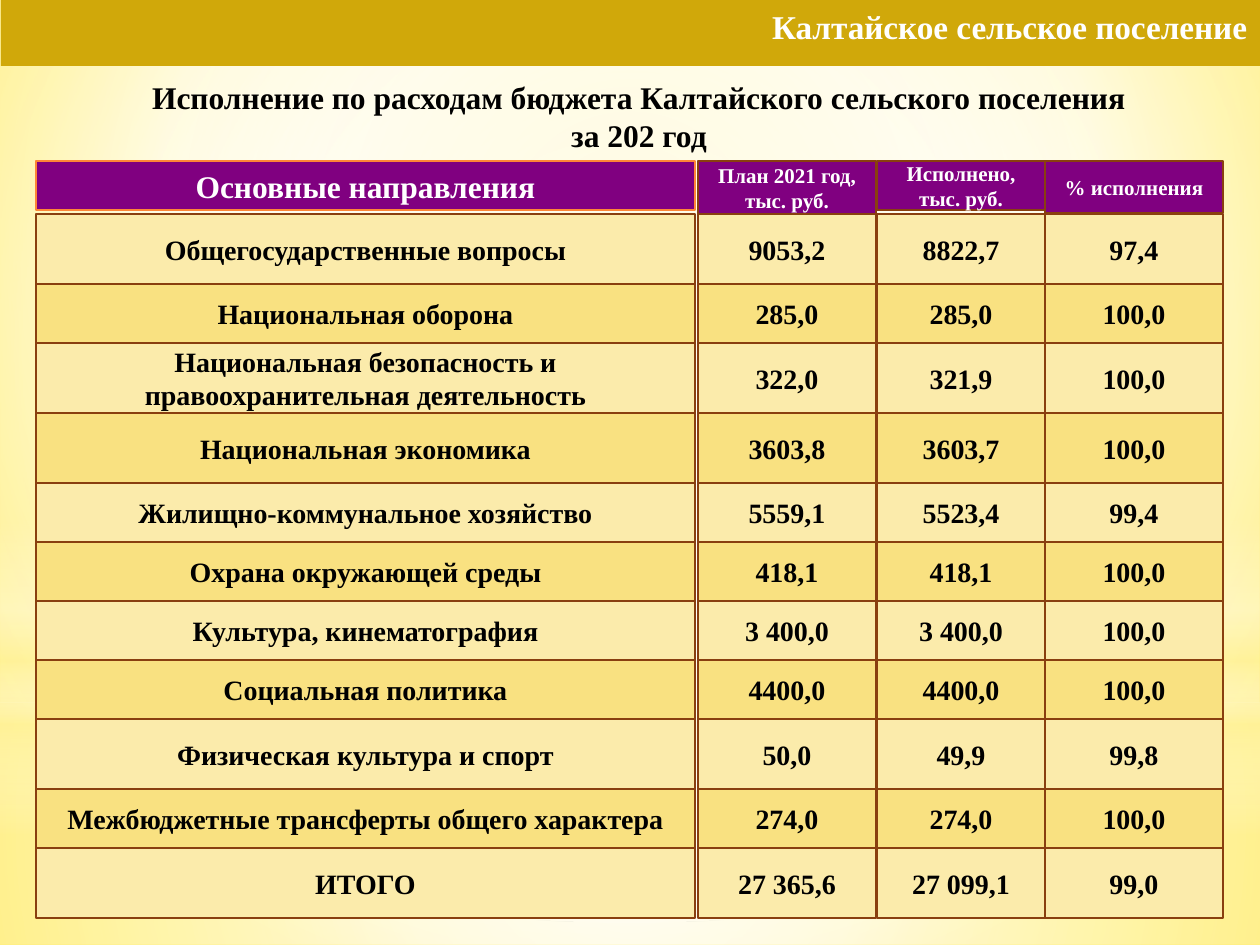
"""Build the slide on budget spending of a rural settlement."""
import pptx
import pptx.util
import pptx.dml.color
import pptx.enum.shapes
import pptx.enum.text
import pptx.oxml
import pptx.oxml.ns

RGB = pptx.dml.color.RGBColor
ALIGN = pptx.enum.text.PP_ALIGN
ANCHOR = pptx.enum.text.MSO_ANCHOR
KIND = pptx.enum.shapes.MSO_SHAPE

WHITE = RGB(0xFF, 0xFF, 0xFF)
BLACK = RGB(0, 0, 0)
GOLD = RGB(0xD0, 0xA8, 0x0A)
PURPLE = RGB(0x80, 0, 0x80)
ORANGE = RGB(0xFE, 0x86, 0x37)
BROWN = RGB(0x89, 0x3F, 0x0F)
BANDS = [RGB(0xFB, 0xEB, 0xAB), RGB(0xF9, 0xE1, 0x81)]
PALE = RGB(0xFF, 0xF3, 0x9D)
LEMON = RGB(0xFF, 0xF1, 0x8D)
YELLOW = RGB(0xFF, 0xE9, 0x4E)

FONT = "Times New Roman"
SCALE = 914400 // 126
MID = (50, 50, 50, 50)

TITLE = "Калтайское сельское поселение"
HEADING = ["Исполнение по расходам бюджета Калтайского сельского поселения",
           "за 202 год"]
COLS = [(36, 659), (698, 178), (877, 168), (1045, 178)]
HEAD = [("Основные направления", 18, ORANGE, 49),
        ("План 2021 год, тыс. руб.", 12, BROWN, 53),
        ("Исполнено, тыс. руб.", 12, BROWN, 49),
        ("% исполнения", 12, BROWN, 52)]
TALL, SHORT = 70, 59
ROWS = [
    (TALL, "Общегосударственные вопросы", "9053,2", "8822,7", "97,4"),
    (SHORT, "Национальная оборона", "285,0", "285,0", "100,0"),
    (TALL, "Национальная безопасность и правоохранительная деятельность",
     "322,0", "321,9", "100,0"),
    (TALL, "Национальная экономика", "3603,8", "3603,7", "100,0"),
    (SHORT, "Жилищно-коммунальное хозяйство", "5559,1", "5523,4", "99,4"),
    (SHORT, "Охрана окружающей среды", "418,1", "418,1", "100,0"),
    (SHORT, "Культура, кинематография", "3 400,0", "3 400,0", "100,0"),
    (SHORT, "Социальная политика", "4400,0", "4400,0", "100,0"),
    (TALL, "Физическая культура и спорт", "50,0", "49,9", "99,8"),
    (SHORT, "Межбюджетные трансферты общего характера",
     "274,0", "274,0", "100,0"),
    (TALL, "ИТОГО", "27 365,6", "27 099,1", "99,0"),
]

BACK = ([(0, LEMON, 100), (60, WHITE, 100), (100, YELLOW, 100)],
        (20, 10, 20, 60))
GLOWS = [
    (KIND.RECTANGLE, (0, 703, 1260, 242),
     [(0, WHITE, 91), (37, WHITE, 76), (100, PALE, 79)], MID),
    (KIND.RECTANGLE, (0, 0, 1260, 703),
     [(0, WHITE, 89), (48, WHITE, 62), (100, PALE, 79)], MID),
    (KIND.RECTANGLE, (0, 519, 1260, 315),
     [(0, WHITE, 0), (29, WHITE, 30), (45, PALE, 40),
      (55, WHITE, 26), (65, PALE, 60), (100, WHITE, 0)], None),
    (KIND.OVAL, (0, 220, 1260, 703),
     [(0, WHITE, 100), (56, WHITE, 0)], MID),
]


def blend(fill, root, stops, focus):
    """Give a fill a gradient, round a focus or straight down."""
    fill.gradient()
    old = root.find(".//" + pptx.oxml.ns.qn("a:gradFill"))
    marks = "".join(
        f'<a:gs pos="{pos * 1000}"><a:srgbClr val="{tone}">'
        f'<a:alpha val="{alpha * 1000}"/></a:srgbClr></a:gs>'
        for pos, tone, alpha in stops)
    way = '<a:lin ang="5400000" scaled="0"/>'
    if focus:
        sides = " ".join(f'{side}="{part * 1000}"'
                         for side, part in zip("ltrb", focus))
        way = f'<a:path path="circle"><a:fillToRect {sides}/></a:path>'
    new = pptx.oxml.parse_xml(
        f'<a:gradFill {pptx.oxml.ns.nsdecls("a")} rotWithShape="1">'
        f'<a:gsLst>{marks}</a:gsLst>{way}</a:gradFill>')
    old.getparent().replace(old, new)


def place(box):
    """Turn px into EMU."""
    return [part * SCALE for part in box]


def write(shape, lines, size, tone, align=ALIGN.CENTER, anchor=ANCHOR.MIDDLE):
    """Set bold lines of text in a shape."""
    frame = shape.text_frame
    frame.word_wrap = True
    frame.vertical_anchor = anchor
    for at, line in enumerate(lines):
        para = frame.add_paragraph() if at else frame.paragraphs[0]
        para.alignment = align
        run = para.add_run()
        run.text = line
        run.font.name = FONT
        run.font.size = pptx.util.Pt(size)
        run.font.bold = True
        run.font.color.rgb = tone


def block(slide, box, fill, edge=None):
    """Add a flat rectangle."""
    shape = slide.shapes.add_shape(KIND.RECTANGLE, *place(box))
    shape.shadow.inherit = False
    shape.fill.solid()
    shape.fill.fore_color.rgb = fill
    if edge is None:
        shape.line.fill.background()
    else:
        shape.line.color.rgb = edge
        shape.line.width = pptx.util.Pt(1.25)
    return shape


def main():
    """Build and save the slide."""
    deck = pptx.Presentation()
    deck.slide_width, deck.slide_height = place((1260, 945))
    slide = deck.slides.add_slide(deck.slide_layouts[6])
    blend(slide.background.fill, slide.element, *BACK)
    for kind, box, stops, focus in GLOWS:
        glow = slide.shapes.add_shape(kind, *place(box))
        glow.shadow.inherit = False
        glow.line.fill.background()
        blend(glow.fill, glow.element, stops, focus)

    banner = block(slide, (1, 0, 1259, 66), GOLD)
    write(banner, [TITLE], 19, WHITE, ALIGN.RIGHT, ANCHOR.TOP)
    label = slide.shapes.add_textbox(*place((36, 72, 1206, 89)))
    write(label, HEADING, 18, BLACK, anchor=ANCHOR.TOP)

    for (left, wide), (text, size, edge, high) in zip(COLS, HEAD):
        cell = block(slide, (left, 161, wide, high), PURPLE, edge)
        write(cell, [text], size, WHITE)
    top = 214
    for at, (high, *texts) in enumerate(ROWS):
        for (left, wide), text in zip(COLS, texts):
            cell = block(slide, (left, top, wide, high), BANDS[at % 2], BROWN)
            write(cell, [text], 16, BLACK)
        top += high
    deck.save("out.pptx")


if __name__ == "__main__":
    main()
